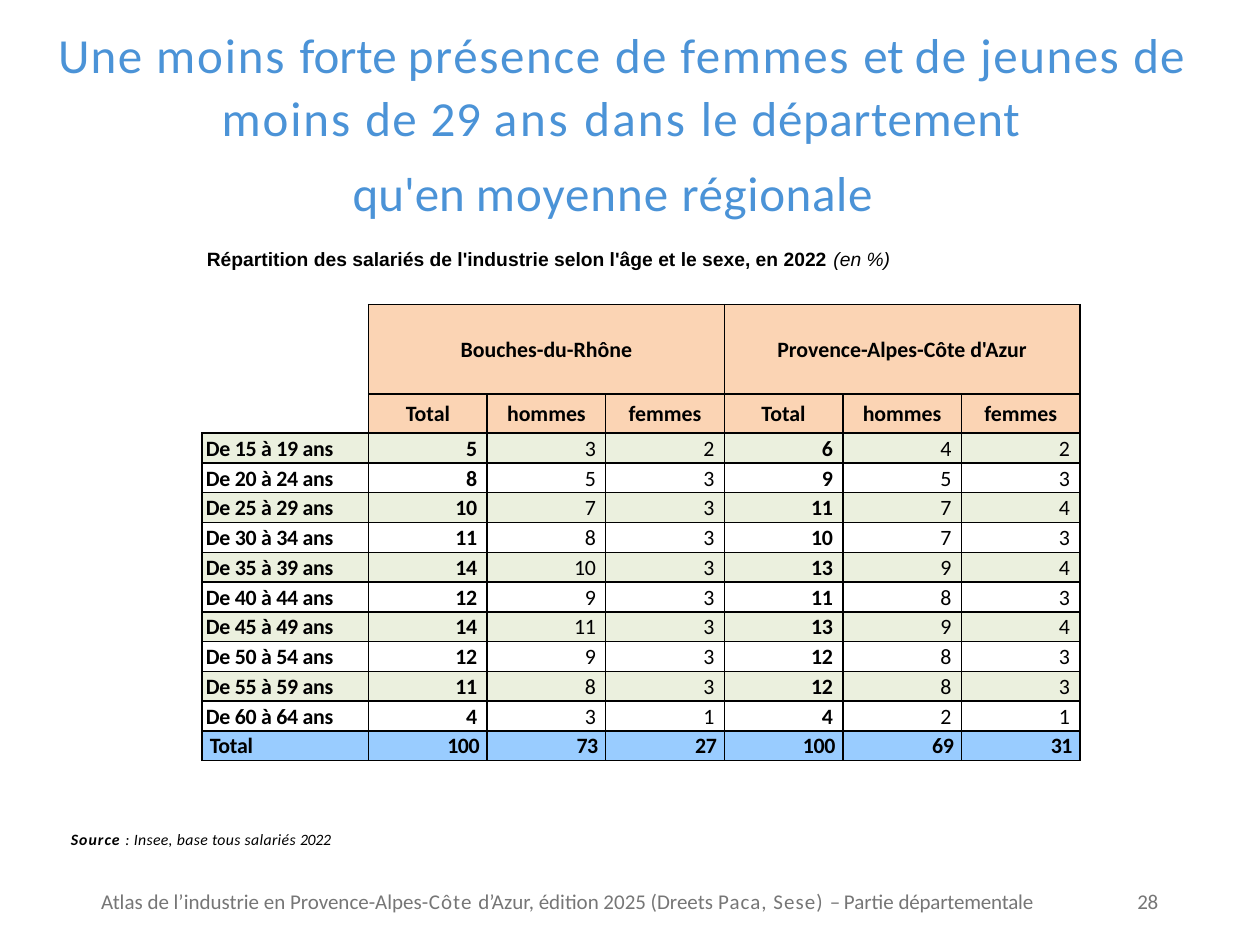
from lxml import etree
from pptx import Presentation
from pptx.dml.color import RGBColor
from pptx.enum.text import MSO_ANCHOR, MSO_AUTO_SIZE, PP_ALIGN
from pptx.oxml.ns import qn
from pptx.util import Cm, Pt

LEFT, CENTER, RIGHT = PP_ALIGN.LEFT, PP_ALIGN.CENTER, PP_ALIGN.RIGHT
TOP, MIDDLE = MSO_ANCHOR.TOP, MSO_ANCHOR.MIDDLE
GROW = MSO_AUTO_SIZE.SHAPE_TO_FIT_TEXT
TITLE_ONLY = 5

BLUE, GREY, BLACK = "4B93D7", "767676", "000000"
PEACH, GREEN, SKY = "FBD4B4", "EBF0DE", "99CCFF"

# Runs are (text, letter spacing in points[, bold[, italic]])
TITLE = [
    ("Une ", 0.8), ("moins ", 1.1), ("forte ", 0), ("présence ", 1), ("de ", 0.8),
    ("femmes ", 1), ("et ", 0), ("de ", 0.8), ("jeunes ", 0.9), ("de ", 0.6),
    ("moins ", 1.1), ("de ", 0.8), ("29 ", 0.5), ("ans ", 1.6), ("dans ", 1.3),
    ("le ", 0.8), ("département", 0.4),
]
TITLE_END = [("qu'en ", 0), ("moyenne ", 0.6), ("régionale", 0.4)]
TABLE_CAPTION = [
    ("Répartition des salariés de l'industrie selon l'âge et le sexe, en 2022 ", 0, True),
    ("(en ", 0, False, True), ("%)", -0.2, False, True),
]
SOURCE = [
    ("Source ", 0.6, True, True),
    (": Insee, base tous salariés ", 0.2, False, True), ("2022", -0.2, False, True),
]
FOOTER = [
    ("Atlas de l’industrie en Provence-Alpes-", 0), ("Côte ", 0.6),
    ("d’Azur, édition 2025 (Dreets ", 0), ("Paca, Sese) ", 0.6), ("– ", -0.6),
    ("Partie ", 0), ("départementale", -0.1),
]

AREAS = ["Bouches-du-Rhône", "Provence-Alpes-Côte d'Azur"]
GROUPS = ["Total", "hommes", "femmes"]
SHARES = [
    ("De 15 à 19 ans", 5, 3, 2, 6, 4, 2),
    ("De 20 à 24 ans", 8, 5, 3, 9, 5, 3),
    ("De 25 à 29 ans", 10, 7, 3, 11, 7, 4),
    ("De 30 à 34 ans", 11, 8, 3, 10, 7, 3),
    ("De 35 à 39 ans", 14, 10, 3, 13, 9, 4),
    ("De 40 à 44 ans", 12, 9, 3, 11, 8, 3),
    ("De 45 à 49 ans", 14, 11, 3, 13, 9, 4),
    ("De 50 à 54 ans", 12, 9, 3, 12, 8, 3),
    ("De 55 à 59 ans", 11, 8, 3, 12, 8, 3),
    ("De 60 à 64 ans", 4, 3, 1, 4, 2, 1),
    ("Total", 100, 73, 27, 100, 69, 31),
]


def rgb(hex_colour):
    return RGBColor.from_string(hex_colour)


def write_runs(paragraph, runs, size, colour, font="Calibri"):
    for text, spacing, *style in runs:
        bold, italic = (style + [False, False])[:2]
        run = paragraph.add_run()
        run.text = text
        run.font.size = Pt(size)
        run.font.name = font
        run.font.bold = bold
        run.font.italic = italic
        run.font.color.rgb = rgb(colour)
        run._r.get_or_add_rPr().set("spc", str(round(spacing * 100)))


def indent(paragraph, left, first_line=0):
    properties = paragraph._p.get_or_add_pPr()
    properties.set("marL", str(Cm(left)))
    properties.set("indent", str(Cm(first_line)))


def prepare_frame(frame, top_margin):
    frame.margin_left = frame.margin_right = frame.margin_bottom = 0
    frame.margin_top = Cm(top_margin)
    frame.word_wrap = True
    frame.auto_size = GROW
    frame.vertical_anchor = TOP


def add_text(slide, left, top, width, height, runs, size, colour, first_indent=0.03):
    """Add a one-paragraph text box and return its frame."""
    box = slide.shapes.add_textbox(Cm(left), Cm(top), Cm(width), Cm(height))
    frame = box.text_frame
    prepare_frame(frame, 0.03)
    paragraph = frame.paragraphs[0]
    indent(paragraph, first_indent)
    write_runs(paragraph, runs, size, colour)
    return frame


def format_title(slide):
    title = slide.shapes.title
    title.left, title.top, title.width, title.height = Cm(1.12), Cm(0.36), Cm(23.19), Cm(2.62)
    prepare_frame(title.text_frame, 0.05)
    paragraph = title.text_frame.paragraphs[0]
    paragraph.alignment = LEFT
    paragraph.line_spacing = 1.07
    indent(paragraph, 3.35, -3.3)
    write_runs(paragraph, TITLE, 28, BLUE)


def add_title_end_and_caption(slide):
    frame = add_text(slide, 4.14, 3.25, 14.2, 2.24, TITLE_END, 28, BLUE, first_indent=2.97)
    caption = frame.add_paragraph()
    caption.space_before = Pt(14.8)
    indent(caption, 0.03)
    write_runs(caption, TABLE_CAPTION, 11, BLACK, "Arial")


def set_borders(cell, sides):
    """Draw thin black borders on the sides named by letters from LRTB, in that order."""
    properties = cell._tc.get_or_add_tcPr()
    for side in sides:
        line = etree.SubElement(properties, qn(f"a:ln{side}"), w=str(Pt(1)))
        solid = etree.SubElement(line, qn("a:solidFill"))
        etree.SubElement(solid, qn("a:srgbClr"), val=BLACK)


def fill_cell(cell, text, colour, bold=True, alignment=CENTER, side_margin=0, spacing=0):
    cell.margin_left = cell.margin_right = Cm(side_margin)
    cell.margin_top, cell.margin_bottom = Cm(0.03), 0
    cell.vertical_anchor = MIDDLE
    if colour:
        cell.fill.solid()
        cell.fill.fore_color.rgb = rgb(colour)
    else:
        cell.fill.background()
    paragraph = cell.text_frame.paragraphs[0]
    paragraph.alignment = alignment
    if text:
        write_runs(paragraph, [(text, spacing, bold)], 12.5, BLACK)


def add_share_table(slide):
    row_count, column_count = len(SHARES) + 2, 1 + len(AREAS) * len(GROUPS)
    frame = slide.shapes.add_table(
        row_count, column_count, Cm(4.07), Cm(6.14), Cm(17.7), Cm(9))
    table = frame.table
    table.first_row = table.horz_banding = False
    for index, column in enumerate(table.columns):
        column.width = Cm(2.39 if index else 3.36)
    for index, row in enumerate(table.rows):
        row.height = Cm(0.6 if index else 1.8)
    for r in range(row_count):
        for c in range(column_count):
            set_borders(table.cell(r, c), "RB" if r < 2 and c == 0 else "LRTB")

    table.cell(0, 0).merge(table.cell(1, 0))
    fill_cell(table.cell(0, 0), "", None)
    for a, area in enumerate(AREAS):
        first = 1 + a * len(GROUPS)
        table.cell(0, first).merge(table.cell(0, first + len(GROUPS) - 1))
        fill_cell(table.cell(0, first), area, PEACH)
        for g, group in enumerate(GROUPS):
            fill_cell(table.cell(1, first + g), group, PEACH)

    for r, (label, *values) in enumerate(SHARES):
        is_total = r == len(SHARES) - 1
        colour = SKY if is_total else (None if r % 2 else GREEN)
        fill_cell(table.cell(r + 2, 0), label, colour, alignment=LEFT,
                  side_margin=0.16 if is_total else 0.08, spacing=-0.15)
        for c, value in enumerate(values):
            bold = is_total or c % len(GROUPS) == 0
            fill_cell(table.cell(r + 2, c + 1), str(value), colour, bold, RIGHT,
                      side_margin=0.15 if is_total else 0.2, spacing=-0.2)


def main():
    presentation = Presentation()
    presentation.slide_width, presentation.slide_height = Cm(25.4), Cm(19.05)
    slide = presentation.slides.add_slide(presentation.slide_layouts[TITLE_ONLY])
    format_title(slide)
    add_title_end_and_caption(slide)
    add_share_table(slide)
    add_text(slide, 1.4, 16.69, 5.44, 0.46, SOURCE, 9, BLACK)
    add_text(slide, 2.01, 17.88, 19.79, 0.58, FOOTER, 12, GREY)
    add_text(slide, 22.83, 17.88, 0.71, 0.58, [("28", -0.2)], 12, GREY, first_indent=0.1)
    presentation.save("out.pptx")


if __name__ == "__main__":
    main()
